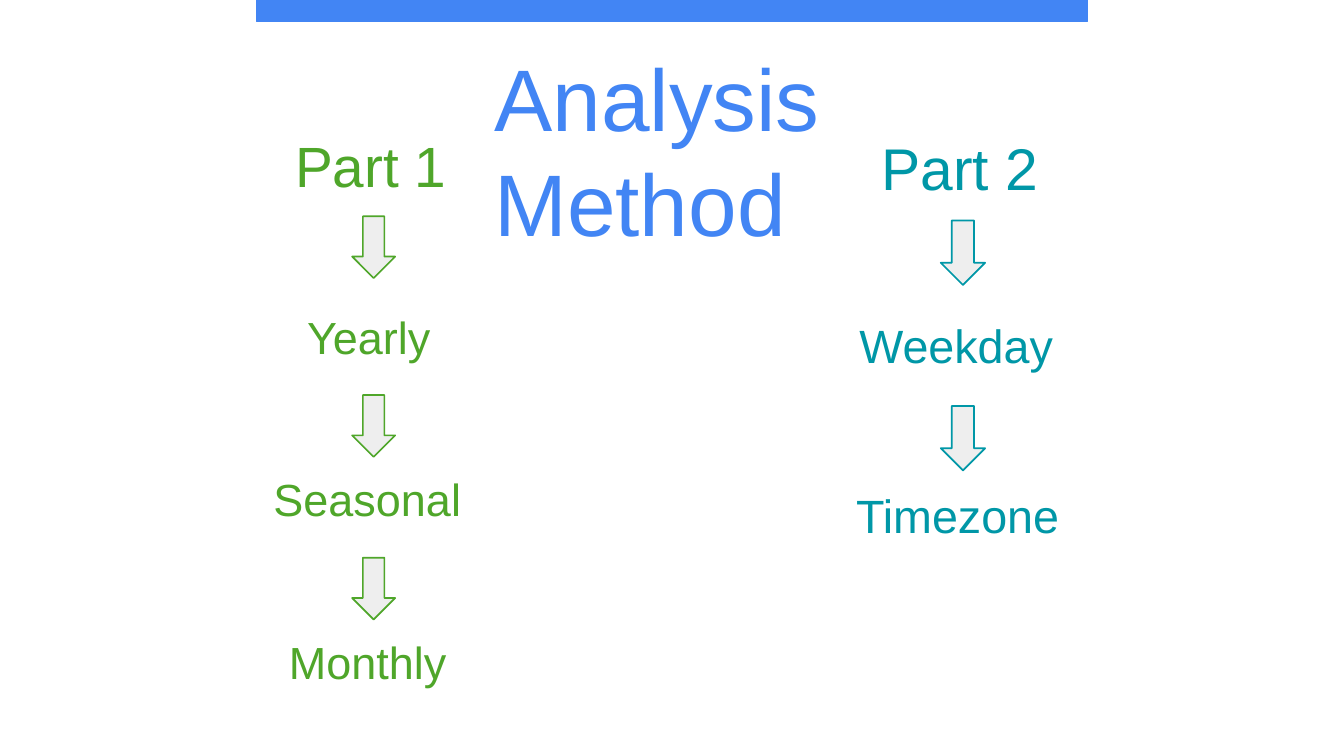
import pptx
import pptx.dml.color
import pptx.enum.shapes
import pptx.enum.text
import pptx.util

PX = 9144
FONT = "Arial"
BLUE, GREEN, TEAL, GREY = "4285F4", "4FA62A", "0097A7", "EEEEEE"
SHAPE = pptx.enum.shapes.MSO_SHAPE


def px(n):
    return pptx.util.Emu(round(n * PX))


def rgb(color):
    return pptx.dml.color.RGBColor.from_string(color)


def add_text(s, box, text, size, color, inset):
    sp = s.shapes.add_textbox(*map(px, box))
    tf = sp.text_frame
    tf.word_wrap = True
    tf.vertical_anchor = pptx.enum.text.MSO_ANCHOR.TOP
    tf.margin_left = tf.margin_right = px(inset)
    tf.margin_top = tf.margin_bottom = px(inset)
    tf.text = text
    r = tf.paragraphs[0].runs[0]
    r.font.name = FONT
    r.font.size = pptx.util.Pt(size)
    r.font.color.rgb = rgb(color)


def add_block(s, kind, box, fill, line, weight):
    sp = s.shapes.add_shape(kind, *map(px, box))
    sp.shadow.inherit = False
    sp.fill.solid()
    sp.fill.fore_color.rgb = rgb(fill)
    sp.line.color.rgb = rgb(line)
    sp.line.width = pptx.util.Pt(weight)


def add_header(s, x, y, w, h):
    add_text(s, (x + 167, y + 23, 283, 63), "Analysis Method", 46.8, BLUE, 10)
    add_block(s, SHAPE.RECTANGLE, (x, y, w, h), BLUE, BLUE, 0.75)


def add_flow(s, x, y, w, row_h, color, sizes, inset, arrow, weight, steps):
    arrow_w, arrow_h = arrow
    center = x + w / 2
    for i, (text, text_w) in enumerate(steps):
        if i:
            box = (center - arrow_w / 2, y + 1, arrow_w, arrow_h)
            add_block(s, SHAPE.DOWN_ARROW, box, GREY, color, weight)
            y += arrow_h + (12 if i == 1 else 0)
        size = sizes[min(i, 1)]
        add_text(s, (center - text_w / 2, y, text_w, row_h), text, size, color, inset)
        y += row_h


def main():
    prs = pptx.Presentation()
    prs.slide_width = px(1000)
    prs.slide_height = px(1000 * 9 / 16)
    s = prs.slides.add_slide(prs.slide_layouts[6])
    add_header(s, 191, 0, 618, 16)
    add_flow(s, 191, 85, 174, 75, GREEN, (30.4, 24.1), 12, (32, 46), 0.9,
             [("Part 1", 141), ("Yearly", 123), ("Seasonal", 173), ("Monthly", 150)])
    add_flow(s, 624, 85, 185, 78, TEAL, (31.5, 25), 13, (33, 48), 0.94,
             [("Part 2", 147), ("Weekday", 180), ("Timezone", 185)])
    prs.save("out.pptx")


if __name__ == "__main__":
    main()
